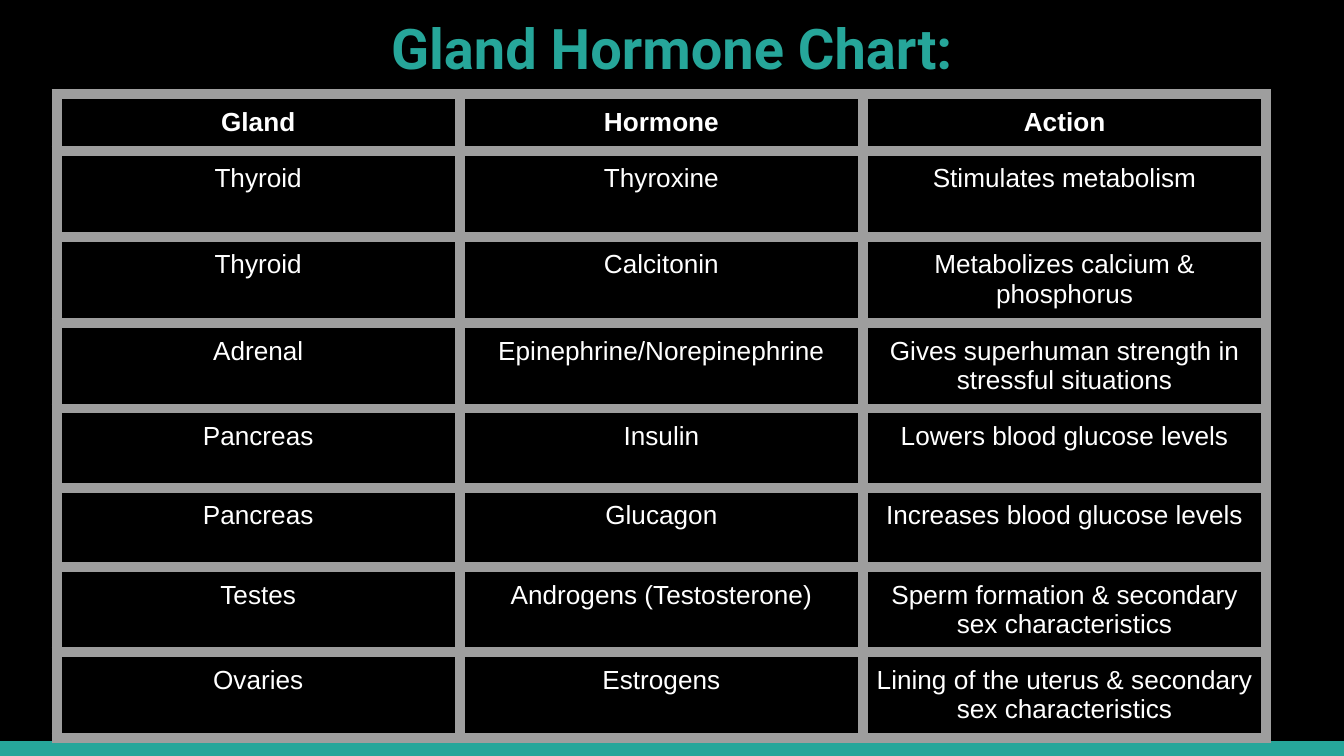
from lxml import etree
from pptx import Presentation
from pptx.dml import color
from pptx.enum import shapes, text
from pptx.oxml import ns
from pptx.util import Cm, Pt

TEAL, BLACK, WHITE, GRAY = "26A69A", "000000", "FFFFFF", "9E9E9E"
INSET = Cm(0.25)
ROW_HEIGHTS = [1.07] + [1.63] * 2 + [1.5] * 5
ROWS = [
    ("Gland", "Hormone", "Action"),
    ("Thyroid", "Thyroxine", "Stimulates metabolism"),
    ("Thyroid", "Calcitonin", "Metabolizes calcium & phosphorus"),
    ("Adrenal", "Epinephrine/Norepinephrine",
     "Gives superhuman strength in stressful situations"),
    ("Pancreas", "Insulin", "Lowers blood glucose levels"),
    ("Pancreas", "Glucagon", "Increases blood glucose levels"),
    ("Testes", "Androgens (Testosterone)",
     "Sperm formation & secondary sex characteristics"),
    ("Ovaries", "Estrogens",
     "Lining of the uterus & secondary sex characteristics"),
]


def rgb(hex_string):
    return color.RGBColor.from_string(hex_string)


def set_insets(target):
    target.margin_left = target.margin_right = INSET
    target.margin_top = target.margin_bottom = INSET


def write_centered(text_frame, wording, font_name, size, hex_color, bold):
    paragraph = text_frame.paragraphs[0]
    paragraph.alignment = text.PP_ALIGN.CENTER
    run = paragraph.add_run()
    run.text = wording
    run.font.name = font_name
    run.font.size = Pt(size)
    run.font.bold = bold
    run.font.color.rgb = rgb(hex_color)


def set_borders(cell, hex_color, width):
    properties = cell._tc.get_or_add_tcPr()
    # Border lines must come before the fill
    for position, side in enumerate(("lnL", "lnR", "lnT", "lnB")):
        line = etree.Element(ns.qn(f"a:{side}"), w=str(Pt(width)))
        fill = etree.SubElement(line, ns.qn("a:solidFill"))
        etree.SubElement(fill, ns.qn("a:srgbClr"), val=hex_color)
        properties.insert(position, line)


def add_footer_bar(slide, left, top, width, height):
    bar = slide.shapes.add_shape(
        shapes.MSO_SHAPE.RECTANGLE, left, top, width, height)
    bar.shadow.inherit = False
    bar.fill.solid()
    bar.fill.fore_color.rgb = rgb(TEAL)
    bar.line.fill.background()


def place_title(slide, left, top, width, height):
    title = slide.shapes.title
    title.left, title.top, title.width, title.height = left, top, width, height
    frame = title.text_frame
    set_insets(frame)
    frame.word_wrap = True
    frame.auto_size = text.MSO_AUTO_SIZE.NONE
    frame.vertical_anchor = text.MSO_ANCHOR.TOP
    write_centered(frame, "Gland Hormone Chart:", "Roboto", 30, TEAL, True)


def add_hormone_table(slide, left, top, width):
    height = Cm(sum(ROW_HEIGHTS))
    table = slide.shapes.add_table(
        len(ROWS), len(ROWS[0]), left, top, width, height).table
    table.horz_banding = False
    for row_index, wordings in enumerate(ROWS):
        table.rows[row_index].height = Cm(ROW_HEIGHTS[row_index])
        for column_index, wording in enumerate(wordings):
            cell = table.cell(row_index, column_index)
            set_insets(cell)
            cell.fill.background()
            set_borders(cell, GRAY, 6)
            write_centered(cell.text_frame, wording, "Arial", 14, WHITE,
                           row_index == 0)


def main():
    presentation = Presentation()
    presentation.slide_width = Cm(25.4)
    presentation.slide_height = Cm(14.29)
    slide = presentation.slides.add_slide(presentation.slide_layouts[5])

    # Background
    slide.background.fill.solid()
    slide.background.fill.fore_color.rgb = rgb(BLACK)

    # Regions, from back to front
    bar_height = Cm(0.28)
    add_footer_bar(slide, 0, presentation.slide_height - bar_height,
                   presentation.slide_width, bar_height)
    place_title(slide, Cm(0.18), 0, Cm(25.04), Cm(2.84))
    add_hormone_table(slide, Cm(1.07), Cm(1.78), Cm(22.86))

    presentation.save("out.pptx")


if __name__ == "__main__":
    main()
